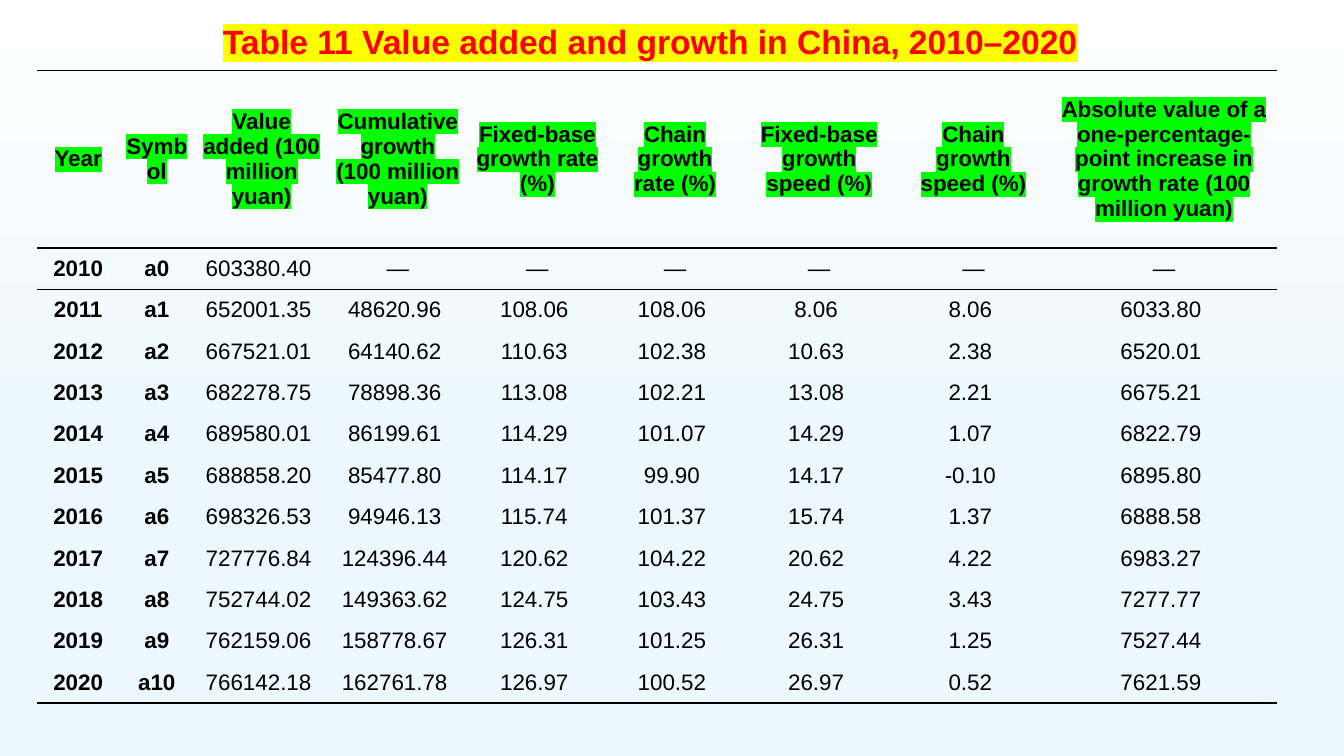
import pptx
import pptx.dml.color
import pptx.enum.shapes
import pptx.enum.text
import pptx.oxml
import pptx.oxml.ns
import pptx.util
from pptx.util import Inches

# Content
TITLE = "Table 11 Value added and growth in China, 2010–2020"
HEADINGS = [
    "Year", "Symbol", "Value added (100 million yuan)",
    "Cumulative growth (100 million yuan)", "Fixed-base growth rate (%)",
    "Chain growth rate (%)", "Fixed-base growth speed (%)", "Chain growth speed (%)",
    "Absolute value of a one-percentage-point increase in growth rate (100 million yuan)",
]
FIRST_YEAR = 2010
FIGURES = [
    ["603380.40", "—", "—", "—", "—", "—", "—"],
    ["652001.35", "48620.96", "108.06", "108.06", "8.06", "8.06", "6033.80"],
    ["667521.01", "64140.62", "110.63", "102.38", "10.63", "2.38", "6520.01"],
    ["682278.75", "78898.36", "113.08", "102.21", "13.08", "2.21", "6675.21"],
    ["689580.01", "86199.61", "114.29", "101.07", "14.29", "1.07", "6822.79"],
    ["688858.20", "85477.80", "114.17", "99.90", "14.17", "-0.10", "6895.80"],
    ["698326.53", "94946.13", "115.74", "101.37", "15.74", "1.37", "6888.58"],
    ["727776.84", "124396.44", "120.62", "104.22", "20.62", "4.22", "6983.27"],
    ["752744.02", "149363.62", "124.75", "103.43", "24.75", "3.43", "7277.77"],
    ["762159.06", "158778.67", "126.31", "101.25", "26.31", "1.25", "7527.44"],
    ["766142.18", "162761.78", "126.97", "100.52", "26.97", "0.52", "7621.59"],
]

# Layout and formats
COLUMN_WIDTHS = [0.81, 0.75, 1.33, 1.37, 1.4, 1.33, 1.53, 1.53, 2.25]
TABLE_LEFT, TABLE_TOP, TABLE_HEIGHT, HEADER_HEIGHT = 0.37, 0.7, 6.28, 1.76
OUTER_RULE, HEADER_RULE = 1.5, 1
PLAIN_TABLE_STYLE = "{2D5ABB26-0587-4C30-8999-92F81FD0307C}"
TITLE_FONT = {"name": "Arial", "size": pptx.util.Pt(24), "bold": True}
LABEL_FONT = {"name": "Arial", "size": pptx.util.Pt(16), "bold": True}
FIGURE_FONT = {**LABEL_FONT, "bold": False}
CELL_FORMAT = {
    "margin_left": Inches(0.07), "margin_right": Inches(0.07),
    "margin_top": 0, "margin_bottom": 0,
    "vertical_anchor": pptx.enum.text.MSO_ANCHOR.MIDDLE,
}


def color(hex_value):
    return pptx.dml.color.RGBColor.from_string(hex_value)


def set_attributes(target, values):
    for name, value in values.items():
        setattr(target, name, value)


def write_text(paragraph, text, font, text_color, highlight=None):
    run = paragraph.add_run()
    run.text = text
    set_attributes(run.font, font)
    run.font.color.rgb = color(text_color)
    if highlight:
        mark = pptx.oxml.parse_xml(
            f'<a:highlight {pptx.oxml.ns.nsdecls("a")}>'
            f'<a:srgbClr val="{highlight}"/></a:highlight>')
        run.font.fill._xPr.find(pptx.oxml.ns.qn("a:solidFill")).addnext(mark)


def add_border(cell, tag, points):
    cell._tc.get_or_add_tcPr().append(pptx.oxml.parse_xml(
        f'<a:{tag} {pptx.oxml.ns.nsdecls("a")} w="{pptx.util.Pt(points)}">'
        f'<a:solidFill><a:srgbClr val="000000"/></a:solidFill></a:{tag}>'))


presentation = pptx.Presentation()
presentation.slide_width = Inches(13.33)
presentation.slide_height = Inches(7.5)
slide = presentation.slides.add_slide(presentation.slide_layouts[5])
title = slide.shapes.title

# Backdrop fading from white to pale blue
backdrop = slide.shapes.add_shape(
    pptx.enum.shapes.MSO_SHAPE.RECTANGLE, 0, 0,
    presentation.slide_width, presentation.slide_height)
backdrop.shadow.inherit = False
backdrop.line.fill.background()
backdrop.fill.gradient()
backdrop.fill.gradient_angle = 270
for stop, (position, stop_color) in zip(
        backdrop.fill.gradient_stops, [(0, "FFFFFF"), (0.56, "EDF8FE")]):
    stop.position = position
    stop.color.rgb = color(stop_color)

# Table
rows = [HEADINGS] + [
    [str(FIRST_YEAR + index), f"a{index}"] + figures
    for index, figures in enumerate(FIGURES)]
last_row = len(rows) - 1
table_shape = slide.shapes.add_table(
    len(rows), len(HEADINGS), Inches(TABLE_LEFT), Inches(TABLE_TOP),
    Inches(sum(COLUMN_WIDTHS)), Inches(TABLE_HEIGHT))
table = table_shape.table
table.first_row = table.horz_banding = False
table._tbl.tblPr.find(pptx.oxml.ns.qn("a:tableStyleId")).text = PLAIN_TABLE_STYLE
for column, width in zip(table.columns, COLUMN_WIDTHS):
    column.width = Inches(width)
for row_index, row in enumerate(table.rows):
    row.height = Inches(
        HEADER_HEIGHT if row_index == 0 else (TABLE_HEIGHT - HEADER_HEIGHT) / last_row)

top_rules = {0: OUTER_RULE, 1: HEADER_RULE}
bottom_rules = {0: HEADER_RULE, last_row: OUTER_RULE}
for row_index, texts in enumerate(rows):
    for column_index, text in enumerate(texts):
        cell = table.cell(row_index, column_index)
        set_attributes(cell, CELL_FORMAT)
        for tag, rules in (("lnT", top_rules), ("lnB", bottom_rules)):
            if row_index in rules:
                add_border(cell, tag, rules[row_index])
        cell.fill.background()
        is_heading = row_index == 0
        is_label = is_heading or column_index < 2
        # Figures carry one trailing space, dashes and labels none
        shown = text if is_label or text == "—" else text + " "
        paragraph = cell.text_frame.paragraphs[0]
        paragraph.alignment = pptx.enum.text.PP_ALIGN.CENTER
        write_text(paragraph, shown, LABEL_FONT if is_label else FIGURE_FONT,
                   "000000", "00FF00" if is_heading else None)

# Title, in front of the table
set_attributes(title, {"left": Inches(2.11), "top": Inches(0.14),
                       "width": Inches(9.97), "height": Inches(0.54)})
title.text_frame.vertical_anchor = pptx.enum.text.MSO_ANCHOR.MIDDLE
title_paragraph = title.text_frame.paragraphs[0]
title_paragraph.alignment = pptx.enum.text.PP_ALIGN.LEFT
write_text(title_paragraph, TITLE, TITLE_FONT, "FF0000", "FFFF00")
table_shape._element.addnext(title._element)

presentation.save("out.pptx")
